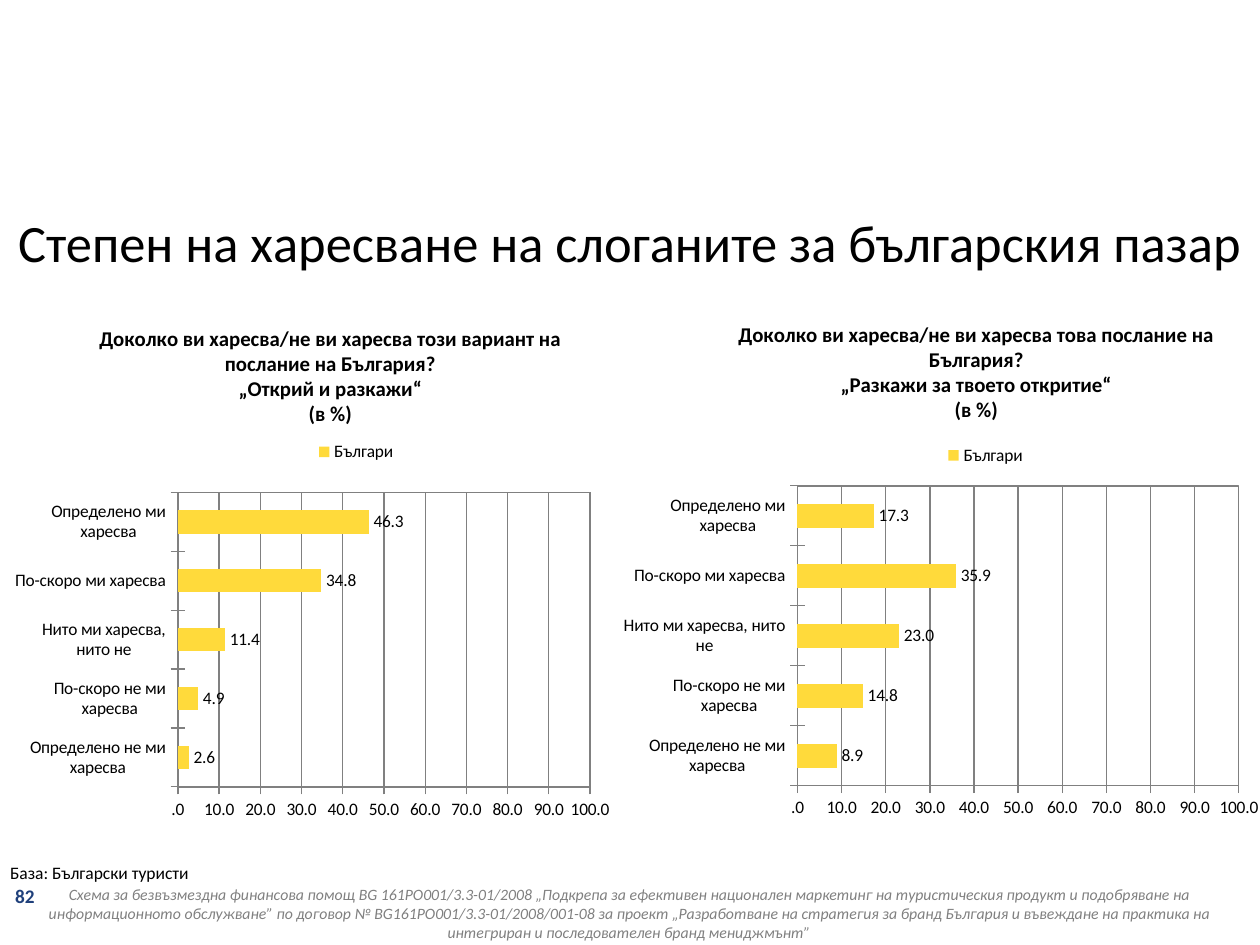
from lxml import etree
from pptx import Presentation
from pptx.chart.data import CategoryChartData
from pptx.dml.color import RGBColor
from pptx.enum.chart import (XL_CHART_TYPE, XL_LABEL_POSITION as LabelPos,
                             XL_LEGEND_POSITION as LegendPos, XL_TICK_MARK as Tick)
from pptx.enum.text import MSO_ANCHOR, PP_ALIGN
from pptx.oxml import parse_xml
from pptx.oxml.ns import nsdecls, qn
from pptx.util import Inches, Pt


def style(font, size, color="000000", bold=False, italic=False):
    font.name = "Calibri"
    font.size = Pt(size)
    font.bold = bold
    font.italic = italic
    font.color.rgb = RGBColor.from_string(color)


def set_layout(parent, index, **values):
    """Give a chart part a manual layout, as fractions of the chart."""
    for old in parent.findall(qn("c:layout")):
        parent.remove(old)
    layout = parse_xml(f"<c:layout {nsdecls('c')}><c:manualLayout/></c:layout>")
    if "w" in values:
        etree.SubElement(layout[0], qn("c:layoutTarget")).set("val", "inner")
    for axis in "xy":
        etree.SubElement(layout[0], qn(f"c:{axis}Mode")).set("val", "edge")
    for key, value in values.items():
        etree.SubElement(layout[0], qn(f"c:{key}")).set("val", str(value))
    parent.insert(index, layout)


prs = Presentation()
prs.slide_width, prs.slide_height = Inches(10), Inches(7.5)
slide = prs.slides.add_slide(prs.slide_layouts[5])

# Title
title = slide.shapes.title
title.left, title.top = Inches(0), Inches(1.58)
title.width, title.height = Inches(10), Inches(0.67)
title.text_frame.text = "Степен на харесване на слоганите за българския пазар"
title.text_frame.vertical_anchor = MSO_ANCHOR.MIDDLE
style(title.text_frame.paragraphs[0].runs[0].font, 30)

# Slogan charts: box, title corner, legend corner, question, values
answers = ["Определено не ми харесва", "По-скоро не ми харесва",
           "Нито ми харесва, нито не", "По-скоро ми харесва",
           "Определено ми харесва"]
slogans = [
    ((0.12, 2.41, 4.72, 4.41), (0.13, 0.03), (0.5, 0.24),
     "Доколко ви харесва/не ви харесва този вариант на послание на България?\n"
     "„Открий и разкажи“\n(в %)",
     (2.6, 4.9, 11.4, 34.8, 46.3)),
    ((4.95, 2.33, 5.04, 4.49), (0.17, 0.04), (0.5, 0.26),
     "Доколко ви харесва/не ви харесва това послание на България?\n"
     "„Разкажи за твоето откритие“\n(в %)",
     (8.9, 14.8, 23.0, 35.9, 17.3)),
]
gray = RGBColor.from_string("808080")
number_format = "####.0"

for box, title_at, legend_at, question, ratings in slogans:
    data = CategoryChartData(number_format=number_format)
    data.categories = answers
    data.add_series("Българи", ratings)
    chart = slide.shapes.add_chart(XL_CHART_TYPE.BAR_CLUSTERED,
                                   *map(Inches, box), data).chart
    style(chart.font, 10)

    # Question above the plot
    chart.has_title = True
    chart.chart_title.text_frame.text = question
    for paragraph in chart.chart_title.text_frame.paragraphs:
        paragraph.alignment = PP_ALIGN.CENTER
        style(paragraph.runs[0].font, 12, bold=True)
    set_layout(chart.chart_title._element, 1, x=title_at[0], y=title_at[1])

    # Legend
    chart.has_legend = True
    chart.legend.position = LegendPos.TOP
    chart.legend.include_in_layout = False
    style(chart.legend.font, 10)
    set_layout(chart.legend._element, 1, x=legend_at[0], y=legend_at[1])

    # Bars and their labels
    plot = chart.plots[0]
    plot.gap_width = 150
    plot.vary_by_categories = False
    bars = plot.series[0]
    bars.format.fill.solid()
    bars.format.fill.fore_color.rgb = RGBColor.from_string("FFDA3B")
    plot.has_data_labels = True
    labels = plot.data_labels
    labels.show_value = True
    labels.number_format, labels.number_format_is_linked = number_format, False
    labels.position = LabelPos.OUTSIDE_END
    style(labels.font, 10)

    # Axes and gridlines
    percent = chart.value_axis
    percent.minimum_scale, percent.maximum_scale = 0, 100
    percent.major_unit = 10
    percent.has_major_gridlines = True
    percent.major_gridlines.format.line.color.rgb = gray
    percent.tick_labels.number_format = number_format
    percent.tick_labels.number_format_is_linked = False
    for axis in (percent, chart.category_axis):
        axis.major_tick_mark = Tick.CROSS
        axis.format.line.color.rgb = gray
        style(axis.tick_labels.font, 10)

    # Plot area with a thin frame
    plot_area = chart.value_axis._element.getparent()
    set_layout(plot_area, 0, x=0.27, y=0.34, w=0.7, h=0.53)
    plot_area.append(parse_xml(
        f'<c:spPr {nsdecls("c", "a")}><a:noFill/><a:ln w="9525"><a:solidFill>'
        '<a:srgbClr val="808080"/></a:solidFill></a:ln></c:spPr>'))

# Base, project footer and page number
footer = ("Схема за безвъзмездна финансова помощ BG 161PO001/3.3-01/2008 „Подкрепа за "
          "ефективен национален маркетинг на туристическия продукт и подобряване на "
          "информационното обслужване” по договор № BG161PO001/3.3-01/2008/001-08 за "
          "проект „Разработване на стратегия за бранд България и въвеждане на практика "
          "на интегриран и последователен бранд мениджмънт”")
notes = [
    ((0, 6.79, 1.69, 0.27), "База: Български туристи", PP_ALIGN.LEFT, dict(size=10)),
    ((0, 6.97, 9.98, 0.56), footer, PP_ALIGN.CENTER,
     dict(size=9, color="808080", italic=True)),
    ((0.04, 6.97, 0.46, 0.4), "82", PP_ALIGN.LEFT,
     dict(size=11, color="1F407B", bold=True)),
]
for box, wording, alignment, look in notes:
    frame = slide.shapes.add_textbox(*map(Inches, box)).text_frame
    frame.word_wrap = True
    frame.margin_left = frame.margin_right = Inches(0.08)
    frame.text = wording
    frame.paragraphs[0].alignment = alignment
    style(frame.paragraphs[0].runs[0].font, **look)

prs.save("out.pptx")
